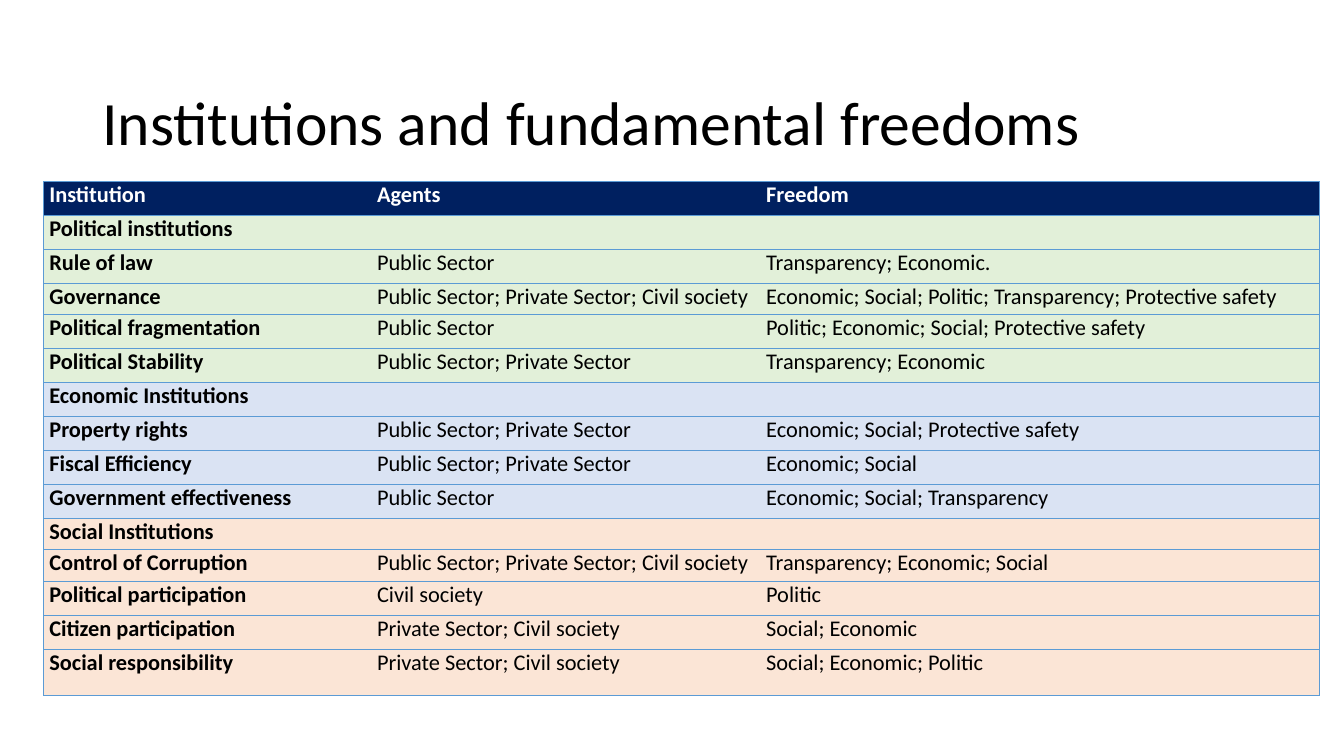
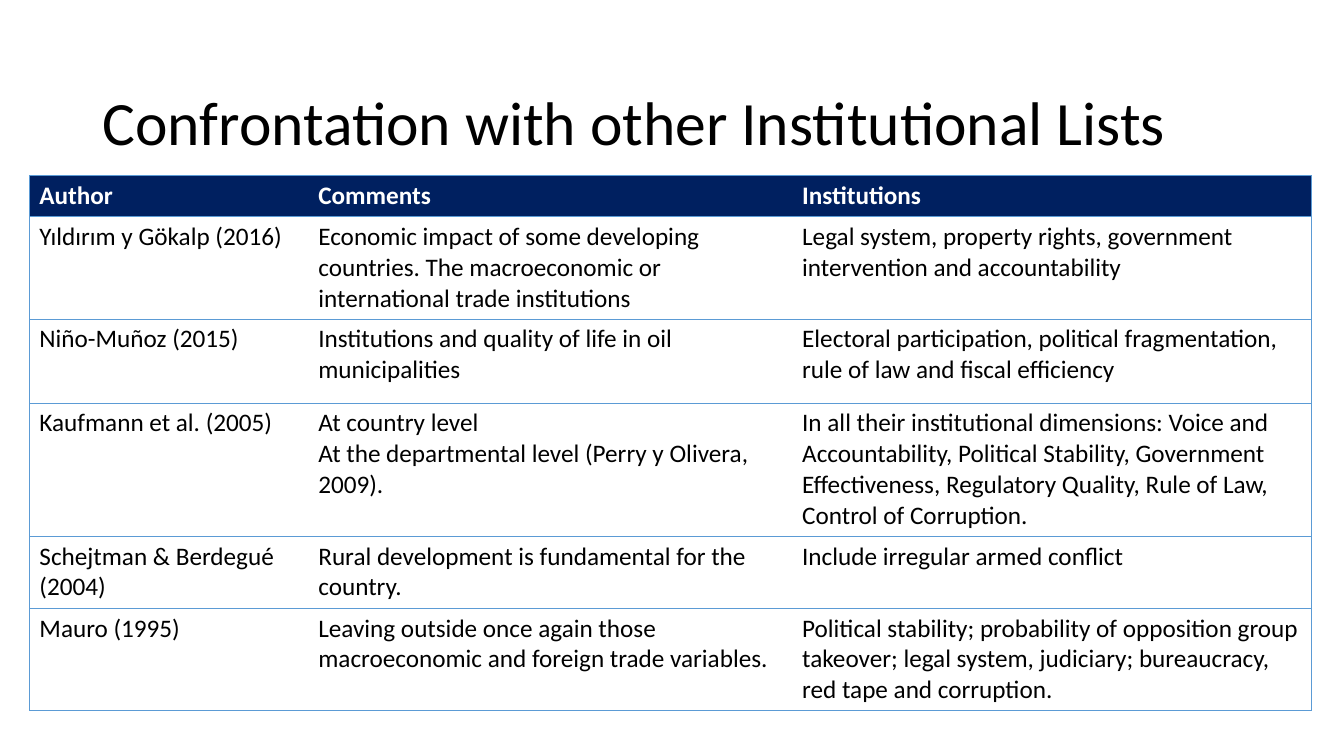
from lxml import etree
from pptx import Presentation
from pptx.dml.color import RGBColor
from pptx.enum import text
from pptx.oxml import ns
from pptx.util import Pt

FONT = "Calibri"
COLORS = {
    "ink": "000000",
    "header": "002060",
    "header_text": "FFFFFF",
    "rule": "5B9BD5",
    "political": "E2F0D9",
    "economic": "DAE3F3",
    "social": "FBE5D6",
}
RULE_WIDTH = Pt(0.5)

FREEDOMS_HEADER = ("Institution", "Agents", "Freedom")
FREEDOMS = {
    "political": ("Political institutions", [
        ("Rule of law", "Public Sector", "Transparency; Economic."),
        ("Governance", "Public Sector; Private Sector; Civil society",
         "Economic; Social; Politic; Transparency; Protective safety"),
        ("Political fragmentation", "Public Sector",
         "Politic; Economic; Social; Protective safety"),
        ("Political Stability", "Public Sector; Private Sector", "Transparency; Economic"),
    ]),
    "economic": ("Economic Institutions", [
        ("Property rights", "Public Sector; Private Sector",
         "Economic; Social; Protective safety"),
        ("Fiscal Efficiency", "Public Sector; Private Sector", "Economic; Social"),
        ("Government effectiveness", "Public Sector", "Economic; Social; Transparency"),
    ]),
    "social": ("Social Institutions", [
        ("Control of Corruption", "Public Sector; Private Sector; Civil society",
         "Transparency; Economic; Social"),
        ("Political participation", "Civil society", "Politic"),
        ("Citizen participation", "Private Sector; Civil society", "Social; Economic"),
        ("Social responsibility", "Private Sector; Civil society",
         "Social; Economic; Politic"),
    ]),
}
FREEDOMS_WIDTHS = (234, 278, 399.6)
FREEDOMS_ROW = 24.3
FREEDOMS_ODD_ROWS = {3: 22, 10: 21.8, 11: 22.9, 14: 33.5}

LISTS_HEADER = ("Author", "Comments", "Institutions")
LISTS = [
    ("Yıldırım y Gökalp (2016)",
     "Economic impact of some developing countries. The macroeconomic or "
     "international trade institutions",
     "Legal system, property rights, government intervention and accountability"),
    ("Niño-Muñoz (2015)",
     "Institutions and quality of life in oil municipalities",
     "Electoral participation, political fragmentation, rule of law and fiscal efficiency"),
    ("Kaufmann et al. (2005)",
     "At country level\nAt the departmental level (Perry y Olivera, 2009).",
     "In all their institutional dimensions: Voice and Accountability, Political "
     "Stability, Government Effectiveness, Regulatory Quality, Rule of Law, "
     "Control of Corruption."),
    ("Schejtman & Berdegué (2004)",
     "Rural development is fundamental for the country.",
     "Include irregular armed conflict"),
    ("Mauro (1995)",
     "Leaving outside once again those macroeconomic and foreign trade variables.",
     "Political stability; probability of opposition group takeover; legal system, "
     "judiciary; bureaucracy, red tape and corruption."),
]
LISTS_WIDTHS = (199.2, 345.6, 371)
LISTS_HEIGHTS = (29, 73, 60, 95, 51.5, 73)


def rgb(name):
    return RGBColor.from_string(COLORS[name])


def style_font(font, size, color, bold=False):
    font.name = FONT
    font.size = Pt(size)
    font.bold = bold
    font.color.rgb = rgb(color)


def add_titled_slide(prs, wording):
    slide = prs.slides.add_slide(prs.slide_layouts[5])
    title = slide.shapes.title
    title.left, title.top, title.width, title.height = Pt(66), Pt(46.8), Pt(828), Pt(86.4)
    frame = title.text_frame
    frame.text = wording
    frame.word_wrap = True
    frame.auto_size = text.MSO_AUTO_SIZE.NONE
    frame.vertical_anchor = text.MSO_ANCHOR.MIDDLE
    heading = frame.paragraphs[0]
    heading.alignment = text.PP_ALIGN.LEFT
    heading.line_spacing = 0.9
    style_font(heading.runs[0].font, 44, "ink")
    return slide


def add_grid(slide, left, top, widths, heights):
    grid = slide.shapes.add_table(len(heights), len(widths), Pt(left), Pt(top),
                                  Pt(sum(widths)), Pt(sum(heights))).table
    grid.first_row = grid.horz_banding = False
    for column, width in zip(grid.columns, widths):
        column.width = Pt(width)
    for row, height in zip(grid.rows, heights):
        row.height = Pt(height)
    return grid


def write_cell(cell, wording, size, color="ink", bold=False, inset=None):
    cell.text_frame.text = wording
    for paragraph in cell.text_frame.paragraphs:
        for run in paragraph.runs:
            style_font(run.font, size, color, bold)
    if inset is not None:
        cell.margin_left = cell.margin_right = Pt(inset)
        cell.margin_top = cell.margin_bottom = 0


def fill_cell(cell, color):
    if color is None:
        cell.fill.background()
    else:
        cell.fill.solid()
        cell.fill.fore_color.rgb = rgb(color)


def rule_cell(cell, at_left, at_right):
    properties = cell._tc.get_or_add_tcPr()
    sides = {"L": at_left, "R": at_right, "T": True, "B": True}
    for position, (side, ruled) in enumerate(sides.items()):
        line = etree.Element(ns.qn(f"a:ln{side}"), w=str(RULE_WIDTH))
        if ruled:
            paint = etree.SubElement(line, ns.qn("a:solidFill"))
            etree.SubElement(paint, ns.qn("a:srgbClr"), val=COLORS["rule"])
        else:
            etree.SubElement(line, ns.qn("a:noFill"))
        properties.insert(position, line)


def write_row(grid, index, wordings, size, fill=None, color="ink", bold_columns=(), inset=None):
    last = len(grid.columns) - 1
    if len(wordings) == 1:
        grid.cell(index, 0).merge(grid.cell(index, last))
    for column in range(last + 1):
        cell = grid.cell(index, column)
        if column < len(wordings):
            write_cell(cell, wordings[column], size, color, column in bold_columns, inset)
        fill_cell(cell, fill)
        rule_cell(cell, column == 0, column == last or cell.is_merge_origin)


def write_header(grid, wordings, size, inset=None):
    write_row(grid, 0, wordings, size, "header", "header_text", range(len(wordings)), inset)


def add_freedoms(prs):
    slide = add_titled_slide(prs, "Institutions and fundamental freedoms")
    rows = [(sector, wordings) for sector, (heading, members) in FREEDOMS.items()
            for wordings in [(heading,), *members]]
    heights = [FREEDOMS_ODD_ROWS.get(i, FREEDOMS_ROW) for i in range(len(rows) + 1)]
    grid = add_grid(slide, 31, 129.6, FREEDOMS_WIDTHS, heights)
    write_header(grid, FREEDOMS_HEADER, 16, inset=4.3)
    for index, (sector, wordings) in enumerate(rows, 1):
        write_row(grid, index, wordings, 16, sector, bold_columns=(0,), inset=4.3)


def add_lists(prs):
    slide = add_titled_slide(prs, "Confrontation with other Institutional Lists")
    grid = add_grid(slide, 21, 125.5, LISTS_WIDTHS, LISTS_HEIGHTS)
    write_header(grid, LISTS_HEADER, 18)
    for index, wordings in enumerate(LISTS, 1):
        write_row(grid, index, wordings, 18)


def main():
    prs = Presentation()
    prs.slide_width, prs.slide_height = Pt(960), Pt(540)
    add_freedoms(prs)
    add_lists(prs)
    prs.save("out.pptx")


if __name__ == "__main__":
    main()
